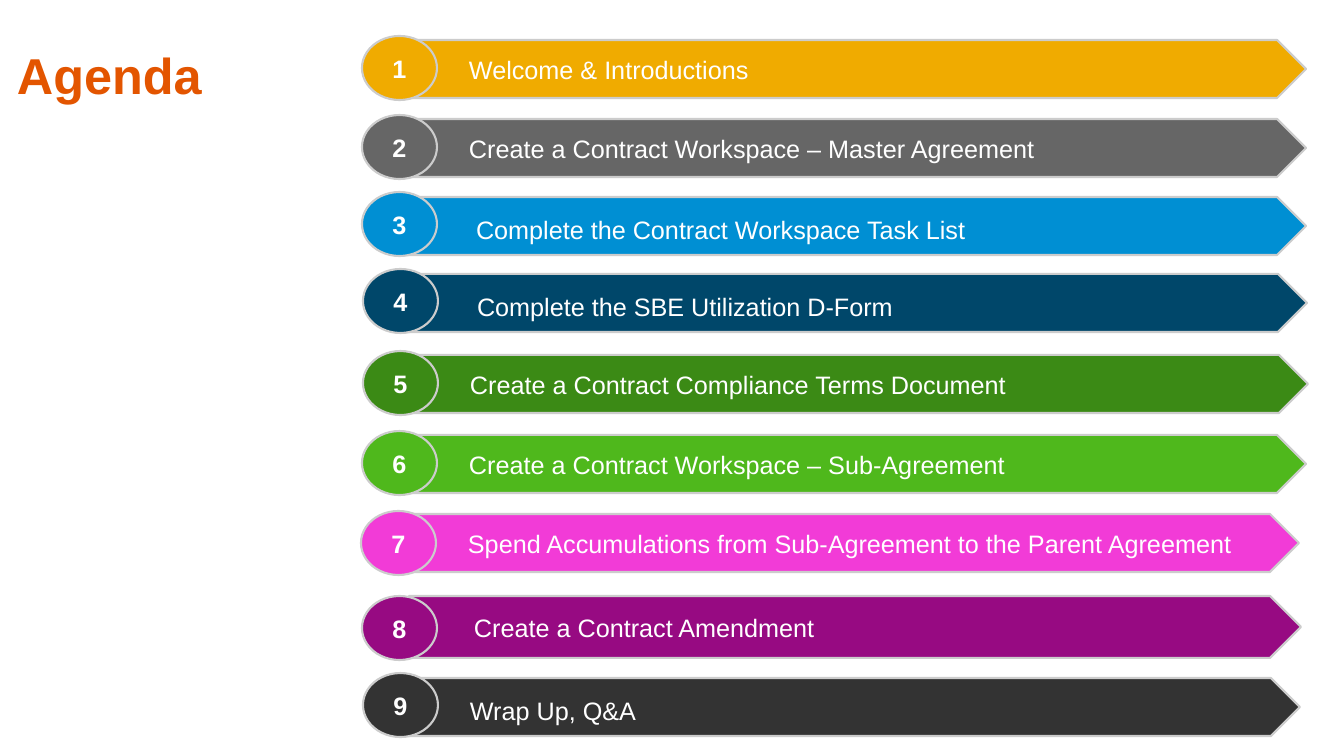
from pptx import Presentation
from pptx import util as u
from pptx.dml.color import RGBColor
from pptx.enum import shapes, text

WHITE = RGBColor(0xFF, 0xFF, 0xFF)
ORANGE = RGBColor(0xE3, 0x55, 0x00)
SILVER = RGBColor(0xCC, 0xCC, 0xCC)
AMBER = RGBColor(0xF0, 0xAB, 0x00)
GREY = RGBColor(0x66, 0x66, 0x66)
BLUE = RGBColor(0x00, 0x8F, 0xD3)
NAVY = RGBColor(0x00, 0x47, 0x6A)
GREEN = RGBColor(0x3B, 0x8A, 0x15)
LIME = RGBColor(0x4F, 0xB8, 0x1C)
PINK = RGBColor(0xF2, 0x3B, 0xD7)
PURPLE = RGBColor(0x97, 0x0A, 0x82)
CHARCOAL = RGBColor(0x33, 0x33, 0x33)

TITLE = "Agenda"
TITLE_BOX = (10, 19, 344, 111)
BADGE_W, BADGE_H = 75, 64

# label, colour, bar box, badge left and top, label left, line spacing
AGENDA = [
    ("Welcome & Introductions", AMBER, (396, 40, 910, 58), (362, 36), 469, 1.0),
    ("Create a Contract Workspace – Master Agreement", GREY, (396, 119, 910, 58), (362, 115), 469, 1.0),
    ("Complete the Contract Workspace Task List", BLUE, (396, 197, 910, 58), (362, 192), 476, 1.2),
    ("Complete the SBE Utilization D-Form", NAVY, (397, 274, 910, 58), (363, 269), 477, 1.2),
    ("Create a Contract Compliance Terms Document", GREEN, (398, 355, 910, 58), (363, 351), 470, 1.0),
    ("Create a Contract Workspace – Sub-Agreement", LIME, (396, 435, 910, 58), (362, 431), 469, 1.0),
    ("Spend Accumulations from Sub-Agreement to the Parent Agreement", PINK, (396, 514, 903, 58), (361, 511), 468, 1.0),
    ("Create a Contract Amendment", PURPLE, (409, 596, 892, 62), (362, 596), 474, 1.0),
    ("Wrap Up, Q&A", CHARCOAL, (397, 678, 903, 58), (363, 673), 470, 1.2),
]


def px(n):
    return u.Emu(round(n * 914400 / 100.8))


def write(sp, words, color, size, bold, align, inset, spacing=1.0):
    tf = sp.text_frame
    left, top, right, bottom = map(px, inset)
    frame = dict(margin_left=left, margin_top=top, margin_right=right, margin_bottom=bottom,
                 word_wrap=True, auto_size=text.MSO_AUTO_SIZE.NONE,
                 vertical_anchor=text.MSO_ANCHOR.MIDDLE)
    for name, value in frame.items():
        setattr(tf, name, value)
    p = tf.paragraphs[0]
    p.alignment = align
    p.line_spacing = spacing
    r = p.add_run()
    r.text = words
    for name, value in dict(name="Arial", size=u.Pt(size), bold=bold).items():
        setattr(r.font, name, value)
    r.font.color.rgb = color


def add_filled(s, kind, box, color):
    sp = s.shapes.add_shape(kind, *map(px, box))
    sp.shadow.inherit = False
    sp.fill.solid()
    sp.fill.fore_color.rgb = color
    sp.line.color.rgb = SILVER
    sp.line.width = u.Pt(1.5)
    return sp


def main():
    prs = Presentation()
    prs.slide_width, prs.slide_height = px(1344), px(756)
    s = prs.slides.add_slide(prs.slide_layouts[5])

    title = s.shapes.title
    for name, value in zip(("left", "top", "width", "height"), TITLE_BOX):
        setattr(title, name, px(value))
    write(title, TITLE, ORANGE, 36, True, text.PP_ALIGN.LEFT, (7, 4, 7, 4))

    for number, (label, color, bar, corner, label_left, spacing) in enumerate(AGENDA, 1):
        sp = add_filled(s, shapes.MSO_SHAPE.PENTAGON, bar, color)
        write(sp, label, WHITE, 18, False, text.PP_ALIGN.LEFT,
              (label_left - bar[0], 5, 10, 5), spacing)
        sp = add_filled(s, shapes.MSO_SHAPE.OVAL, (*corner, BADGE_W, BADGE_H), color)
        write(sp, str(number), WHITE, 18, True, text.PP_ALIGN.CENTER, (10, 5, 10, 5))

    prs.save("out.pptx")


if __name__ == "__main__":
    main()
